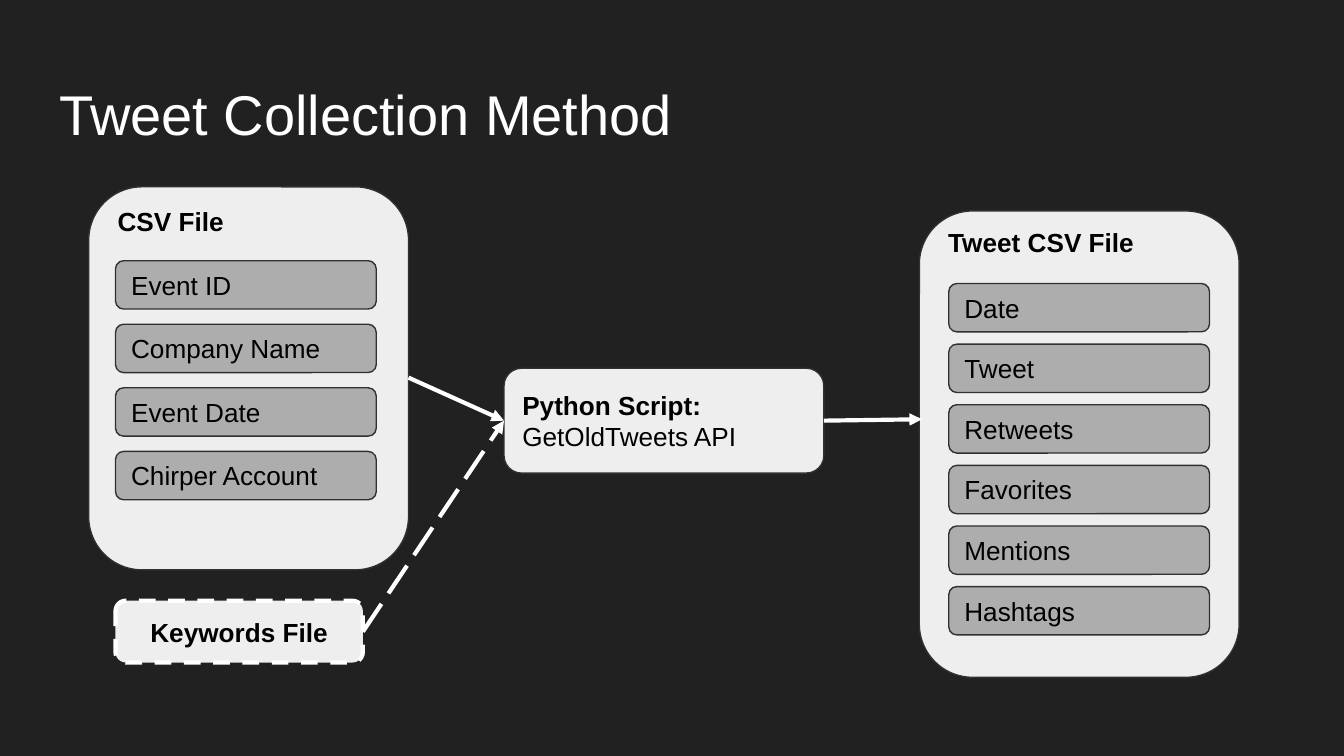
from lxml import etree
from pptx import Presentation
from pptx import util as u
from pptx.dml.color import RGBColor
from pptx.enum import dml, shapes, text
from pptx.oxml.ns import qn

COLS, ROWS = 100, 56.25
CELL = u.Inches(10) / COLS
PANEL_W, FIELD_W, FIELD_H = 23.8, 19.4, 3.6
COLORS = {
    "background": "212121",
    "panel": "EEEEEE",
    "field": "ADADAD",
    "outline": "303030",
    "light": "FFFFFF",
    "ink": "000000",
}


def grid(*cells):
    return [u.Emu(round(c * CELL)) for c in cells]


def rgb(name):
    return RGBColor.from_string(COLORS[name])


def style_font(font, size, color, bold=False):
    font.name, font.size, font.bold = "Arial", u.Pt(size), bold
    font.color.rgb = rgb(color)


def style_line(line, color, width, dash=None):
    line.color.rgb = rgb(color)
    line.width = u.Pt(width)
    if dash:
        line.dash_style = dash


def set_margins(tf, top=1):
    tf.margin_left, tf.margin_right, tf.margin_top = grid(1, 1, top)
    tf.margin_bottom = 0


def add_title(s, label):
    sp = s.shapes.title
    sp.left, sp.top, sp.width, sp.height = grid(3.4, 4.9, 93.2, 6.3)
    tf = sp.text_frame
    tf.text = label
    tf.auto_size = text.MSO_AUTO_SIZE.NONE
    tf.vertical_anchor = text.MSO_ANCHOR.TOP
    set_margins(tf)
    p = tf.paragraphs[0]
    p.alignment = text.PP_ALIGN.LEFT
    style_font(p.font, 30, "light")


def add_box(s, at, lines, fill="panel", align=text.PP_ALIGN.LEFT):
    sp = s.shapes.add_shape(shapes.MSO_SHAPE.ROUNDED_RECTANGLE, *grid(*at))
    sp.shadow.inherit = False
    sp.fill.solid()
    sp.fill.fore_color.rgb = rgb(fill)
    style_line(sp.line, "outline", 0.75)
    tf = sp.text_frame
    tf.word_wrap = True
    tf.vertical_anchor = text.MSO_ANCHOR.MIDDLE
    set_margins(tf, 0)
    tf.text = "\n".join(label for label, bold in lines)
    for p, (label, bold) in zip(tf.paragraphs, lines):
        p.alignment = align
        style_font(p.font, 14, "ink", bold)
    return sp


def add_file(s, at, heading, heading_top, fields, first, pitch):
    sp = add_box(s, at, [(heading, True)])
    sp.text_frame.vertical_anchor = text.MSO_ANCHOR.TOP
    set_margins(sp.text_frame, heading_top)
    left, top = first
    for i, field in enumerate(fields):
        add_box(s, (left, top + i * pitch, FIELD_W, FIELD_H),
                [(field, False)], "field")


def add_arrow(s, start, end, dash=None):
    c = s.shapes.add_connector(shapes.MSO_CONNECTOR.STRAIGHT, *grid(*start, *end))
    style_line(c.line, "light", 2.25, dash)
    ln = c.line._get_or_add_ln()
    etree.SubElement(ln, qn("a:tailEnd"), type="triangle")
    etree.SubElement(c._element.spPr, qn("a:effectLst"))


def main():
    prs = Presentation()
    prs.slide_width, prs.slide_height = grid(COLS, ROWS)
    s = prs.slides.add_slide(prs.slide_layouts[5])
    s.background.fill.solid()
    s.background.fill.fore_color.rgb = rgb("background")

    add_title(s, "Tweet Collection Method")
    add_file(s, (6.6, 13.9, PANEL_W, 28.5), "CSV File", 0.2,
             ["Event ID", "Company Name", "Event Date", "Chirper Account"],
             (8.6, 19.4), 4.73)
    add_box(s, (37.5, 27.4, PANEL_W, 7.8),
            [("Python Script:", True), ("GetOldTweets API", False)])
    add_file(s, (68.4, 15.7, PANEL_W, 34.7), "Tweet CSV File", 0,
             ["Date", "Tweet", "Retweets", "Favorites", "Mentions", "Hashtags"],
             (70.6, 21.1), 4.51)
    keywords = add_box(s, (8.6, 44.7, 18.4, 4.6), [("Keywords File", True)],
                       align=text.PP_ALIGN.CENTER)
    style_line(keywords.line, "light", 2.25, dml.MSO_LINE.DASH)

    script_in = (37.5, 31.3)
    add_arrow(s, (61.3, 31.3), (68.6, 31.2))
    add_arrow(s, (30.4, 28.1), script_in)
    add_arrow(s, (27, 47), script_in, dml.MSO_LINE.LONG_DASH)
    prs.save("out.pptx")


if __name__ == "__main__":
    main()
